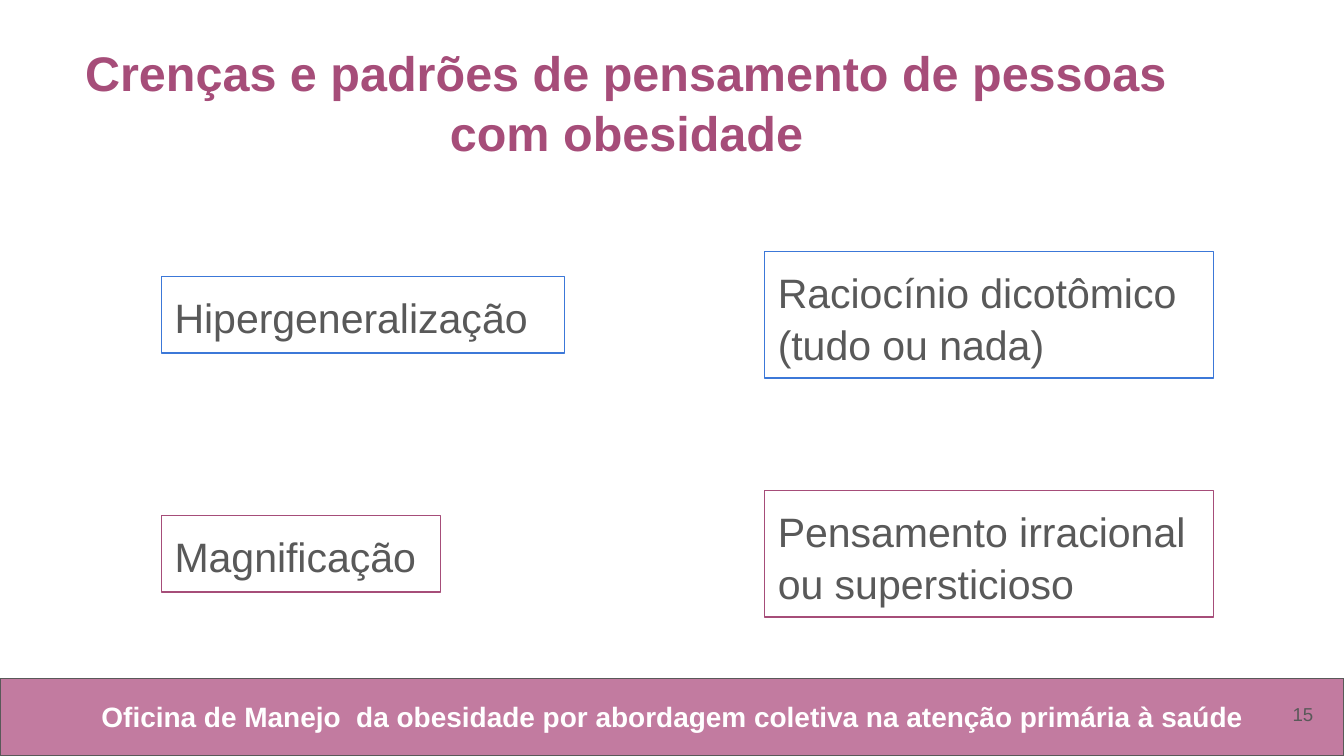
import pptx
import pptx.util
import pptx.dml.color
import pptx.enum.shapes
import pptx.enum.text

Cm, Pt = pptx.util.Cm, pptx.util.Pt
Align = pptx.enum.text.PP_ALIGN
Anchor = pptx.enum.text.MSO_ANCHOR

# Content
TITLE = "Crenças e padrões de pensamento de pessoas com obesidade"
FOOTER = "Oficina de Manejo  da obesidade por abordagem coletiva na atenção primária à saúde"
PAGE = "15"
# One row per line colour; each cell is text, width, height (cm)
ROWS = [
    ("blue", [("Hipergeneralização", 7.62, 1.45),
              ("Raciocínio dicotômico (tudo ou nada)", 8.48, 2.39)]),
    ("plum", [("Magnificação", 5.28, 1.45),
              ("Pensamento irracional ou supersticioso", 8.48, 2.39)]),
]
COLORS = {"plum": "A64D79", "pink": "C27BA0", "blue": "3C78D8",
          "gray": "595959", "white": "FFFFFF"}

# Layout (cm)
WIDE, HIGH = 25.4, 14.29
LEFTS = [3.05, 14.45]
MID, STEP = 5.95, 4.52
BAR = 12.83


def color(name):
    return pptx.dml.color.RGBColor.from_string(COLORS[name])


def place(shape, left, top, width, height):
    shape.left, shape.top = Cm(left), Cm(top)
    shape.width, shape.height = Cm(width), Cm(height)


def write(shape, text, size, tint, bold=False, align=Align.LEFT,
          anchor=Anchor.TOP, space=1.0):
    frame = shape.text_frame
    frame.word_wrap = True
    frame.auto_size = pptx.enum.text.MSO_AUTO_SIZE.NONE
    frame.vertical_anchor = anchor
    frame.margin_left = frame.margin_right = Cm(0.25)
    frame.margin_top = frame.margin_bottom = Cm(0.25)
    frame.text = text
    para = frame.paragraphs[0]
    para.alignment = align
    para.line_spacing = space
    para.font.name, para.font.size = "Arial", Pt(size)
    para.font.bold = bold
    para.font.color.rgb = color(tint)


def add_box(slide, left, top, width, height, line, fill=None):
    box = slide.shapes.add_shape(pptx.enum.shapes.MSO_SHAPE.RECTANGLE,
                                 Cm(left), Cm(top), Cm(width), Cm(height))
    box.shadow.inherit = False
    if fill:
        box.fill.solid()
        box.fill.fore_color.rgb = color(fill)
    else:
        box.fill.background()
    box.line.color.rgb = color(line)
    box.line.width = Pt(0.75)
    return box


def add_text(slide, left, top, width, height):
    return slide.shapes.add_textbox(Cm(left), Cm(top), Cm(width), Cm(height))


def main():
    deck = pptx.Presentation()
    deck.slide_width, deck.slide_height = Cm(WIDE), Cm(HIGH)
    slide = deck.slides.add_slide(deck.slide_layouts[5])

    # Footer bar
    add_box(slide, 0, BAR, WIDE, HIGH - BAR, "gray", "pink")
    note = add_text(slide, 0.86, 12.98, 23.7, 1.14)
    write(note, FOOTER, 15, "white", True, Align.CENTER)

    # Title
    head = slide.shapes.title
    place(head, 0.76, 0.51, 22.17, 2.84)
    write(head, TITLE, 26, "plum", True, Align.CENTER, space=1.04)

    # Belief boxes, centred on each row
    for row, (line, cells) in enumerate(ROWS):
        for left, (text, width, height) in zip(LEFTS, cells):
            top = MID + row * STEP - height / 2
            box = add_box(slide, left, top, width, height, line)
            write(box, text, 22, "gray", space=1.06)

    # Page number
    page = add_text(slide, 23.55, 12.95, 1.52, 1.09)
    write(page, PAGE, 10, "gray", align=Align.RIGHT, anchor=Anchor.MIDDLE)

    deck.save("out.pptx")


if __name__ == "__main__":
    main()
